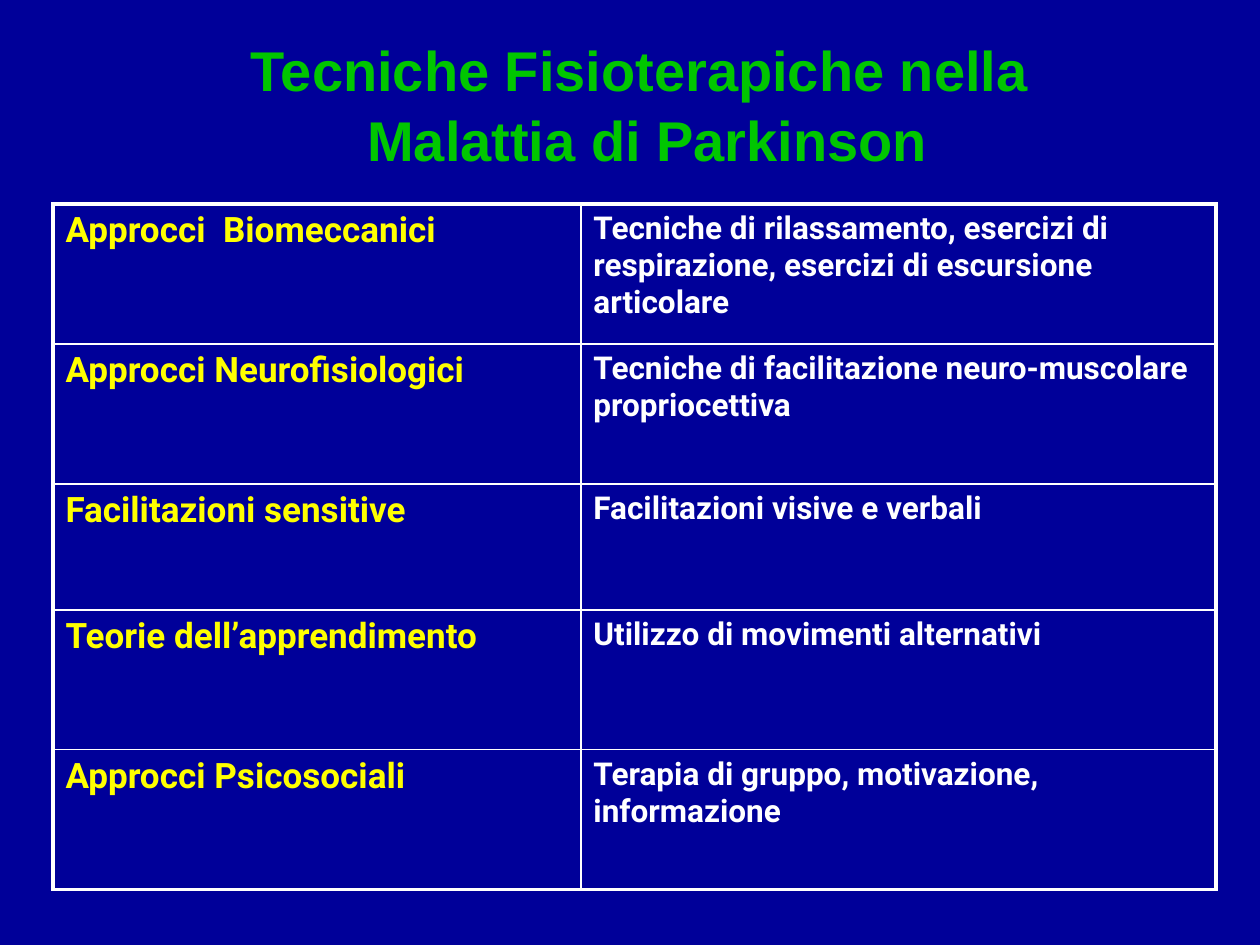
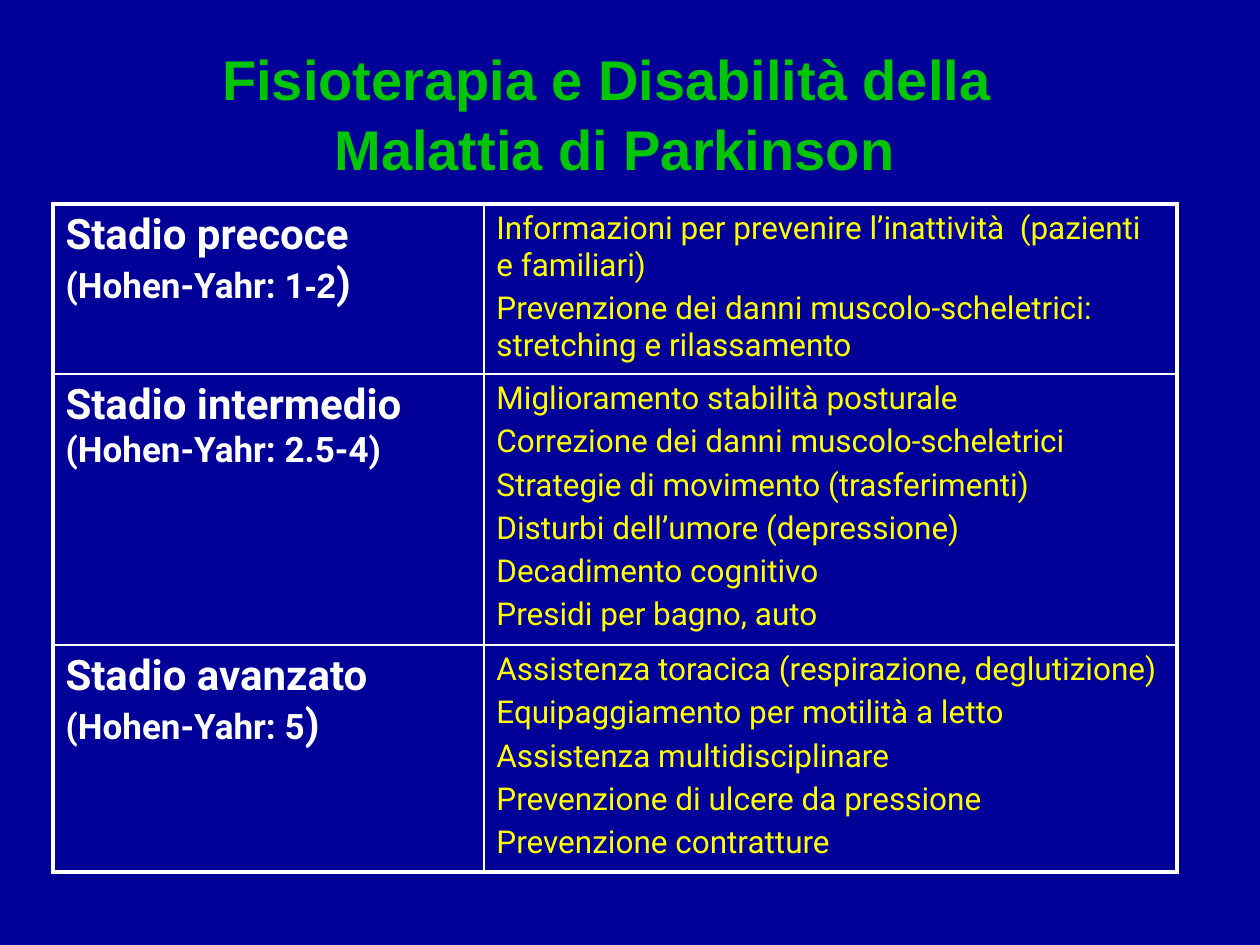
from dataclasses import dataclass

from lxml import etree
from pptx import Presentation
from pptx.dml.color import RGBColor
from pptx.enum.text import MSO_ANCHOR, MSO_AUTO_SIZE, PP_ALIGN
from pptx.oxml.ns import qn
from pptx.util import Inches, Pt

TOP = MSO_ANCHOR.TOP
NO_FIT = MSO_AUTO_SIZE.NONE
CENTER = PP_ALIGN.CENTER

COLORS = {
    "background": "000099",
    "title": "00C600",
    "yellow": "FFFF00",
    "white": "FFFFFF",
}
TITLE_FONT, BODY_FONT = "Arial", "Roboto"
TITLE_ONLY = 5
TABLE_LEFT, TABLE_TOP = 0.42, 1.62
HANGING = 0.58
OUTER_LINE, INNER_LINE = 2.25, 1


@dataclass(frozen=True)
class Piece:
    text: str
    size: int
    font: str = BODY_FONT


@dataclass(frozen=True)
class ColumnStyle:
    width: float
    color: str
    bold: bool
    hanging: float = 0
    space_before: float = 0


@dataclass(frozen=True)
class Row:
    height: float
    heading: list[list[Piece]]
    details: list[str]


@dataclass(frozen=True)
class TableSlide:
    title: str
    title_box: tuple[float, float, float, float]
    columns: tuple[ColumnStyle, ColumnStyle]
    rows: list[Row]


def approach(height: float, name: str, techniques: str) -> Row:
    return Row(height, [[Piece(name, 20)]], [techniques])


def stage(height: float, name: str, scale: list[Piece], details: list[str]) -> Row:
    return Row(height, [[Piece(name, 24)], scale], details)


SLIDES = [
    TableSlide(
        "Tecniche Fisioterapiche nella \nMalattia di Parkinson",
        (0.59, 0.21, 9.1, 1.17),
        (ColumnStyle(4.19, "yellow", True, HANGING),
         ColumnStyle(5.04, "white", True, space_before=3.6)),
        [
            approach(1.11, "Approcci  Biomeccanici",
                     "Tecniche di rilassamento, esercizi di respirazione, "
                     "esercizi di escursione articolare"),
            approach(1.11, "Approcci Neurofisiologici",
                     "Tecniche di facilitazione neuro-muscolare propriocettiva"),
            approach(1, "Facilitazioni sensitive", "Facilitazioni visive e verbali"),
            approach(1.11, "Teorie dell’apprendimento",
                     "Utilizzo di movimenti alternativi"),
            approach(1.11, "Approcci Psicosociali",
                     "Terapia di gruppo, motivazione, informazione"),
        ],
    ),
    TableSlide(
        "Fisioterapia e Disabilità della \nMalattia di Parkinson",
        (0.43, 0.28, 8.9, 1.17),
        (ColumnStyle(3.42, "white", True, HANGING),
         ColumnStyle(5.5, "yellow", False, space_before=3.6)),
        [
            stage(1.35, "Stadio precoce",
                  [Piece("(Hohen-Yahr: 1", 20), Piece("-2", 20, TITLE_FONT),
                   Piece(")", 24)],
                  ["Informazioni per prevenire l’inattività  (pazienti e familiari)",
                   "Prevenzione dei danni muscolo-scheletrici: "
                   "stretching e rilassamento"]),
            stage(2.15, "Stadio intermedio", [Piece("(Hohen-Yahr: 2.5-4)", 20)],
                  ["Miglioramento stabilità posturale",
                   "Correzione dei danni muscolo-scheletrici",
                   "Strategie di movimento (trasferimenti)",
                   "Disturbi dell’umore (depressione)",
                   "Decadimento cognitivo",
                   "Presidi per bagno, auto"]),
            stage(1.8, "Stadio avanzato",
                  [Piece("(Hohen-Yahr: 5", 20), Piece(")", 24)],
                  ["Assistenza toracica (respirazione, deglutizione)",
                   "Equipaggiamento per motilità a letto",
                   "Assistenza multidisciplinare",
                   "Prevenzione di ulcere da pressione",
                   "Prevenzione contratture"]),
        ],
    ),
]


def rgb(name: str) -> RGBColor:
    return RGBColor.from_string(COLORS[name])


def set_font(font, name: str, size: int, color: str, bold: bool) -> None:
    font.name = name
    font.size = Pt(size)
    font.bold = bold
    font.color.rgb = rgb(color)


def add_title(s, text: str, box: tuple[float, float, float, float]) -> None:
    sp = s.shapes.title
    sp.left, sp.top, sp.width, sp.height = map(Inches, box)
    tf = sp.text_frame
    tf.text = text
    tf.word_wrap = True
    tf.auto_size = NO_FIT
    tf.vertical_anchor = TOP
    for p in tf.paragraphs:
        p.alignment = CENTER
        p.line_spacing = 1.04
        set_font(p.font, TITLE_FONT, 32, "title", True)


def set_borders(cell, outer: dict[str, bool]) -> None:
    tc_pr = cell._tc.get_or_add_tcPr()
    for side, is_outer in outer.items():
        width = Pt(OUTER_LINE if is_outer else INNER_LINE)
        ln = etree.SubElement(tc_pr, qn(f"a:ln{side}"), w=str(width))
        fill = etree.SubElement(ln, qn("a:solidFill"))
        etree.SubElement(fill, qn("a:srgbClr"), val=COLORS["white"])


def fill_cell(cell, lines: list[list[Piece]], style: ColumnStyle) -> None:
    tf = cell.text_frame
    for i, pieces in enumerate(lines):
        p = tf.add_paragraph() if i else tf.paragraphs[0]
        if style.hanging:
            p_pr = p._p.get_or_add_pPr()
            p_pr.set("marL", str(Inches(style.hanging)))
            p_pr.set("indent", str(-Inches(style.hanging)))
        if i and style.space_before:
            p.space_before = Pt(style.space_before)
        first = pieces[0]
        set_font(p.font, first.font, first.size, style.color, style.bold)
        for piece in pieces:
            r = p.add_run()
            r.text = piece.text
            if piece.font != first.font:
                r.font.name = piece.font
            if piece.size != first.size:
                r.font.size = Pt(piece.size)


def add_grid(s, columns: tuple[ColumnStyle, ...], rows: list[Row]) -> None:
    width = sum(c.width for c in columns)
    height = sum(row.height for row in rows)
    table = s.shapes.add_table(
        len(rows), len(columns), Inches(TABLE_LEFT), Inches(TABLE_TOP),
        Inches(width), Inches(height)).table
    table.first_row = table.horz_banding = False
    for j, style in enumerate(columns):
        table.columns[j].width = Inches(style.width)
    for i, row in enumerate(rows):
        table.rows[i].height = Inches(row.height)
        contents = (row.heading, [[Piece(text, 18)] for text in row.details])
        for j, (lines, style) in enumerate(zip(contents, columns)):
            cell = table.cell(i, j)
            fill_cell(cell, lines, style)
            set_borders(cell, {"L": j == 0, "R": j == len(columns) - 1,
                               "T": i == 0, "B": i == len(rows) - 1})
            cell.fill.background()


def main() -> None:
    prs = Presentation()
    prs.slide_width, prs.slide_height = Inches(10), Inches(7.5)
    for content in SLIDES:
        s = prs.slides.add_slide(prs.slide_layouts[TITLE_ONLY])
        s.background.fill.solid()
        s.background.fill.fore_color.rgb = rgb("background")
        add_title(s, content.title, content.title_box)
        add_grid(s, content.columns, content.rows)
    prs.save("out.pptx")


if __name__ == "__main__":
    main()
